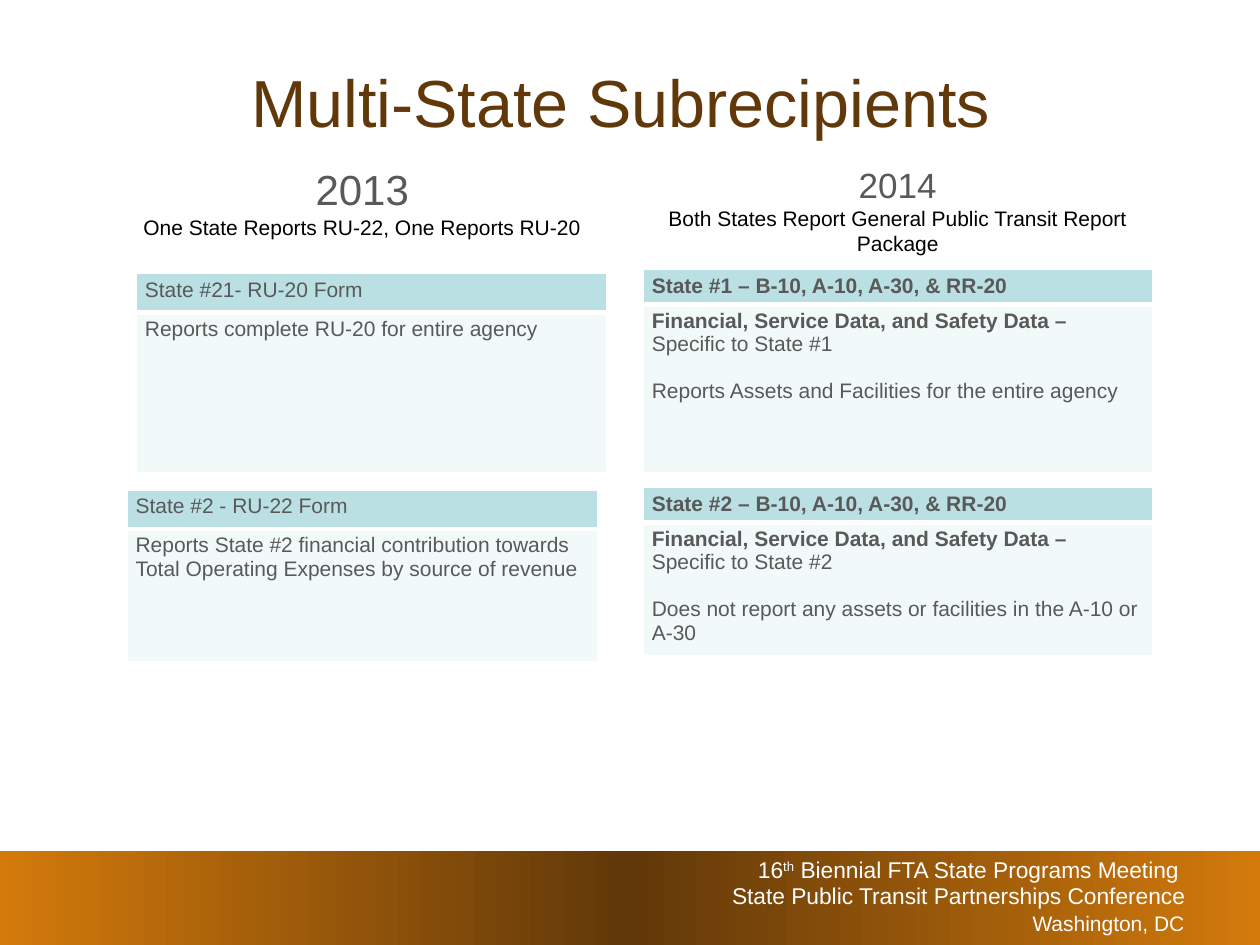
import copy

import pptx
import pptx.dml.color
import pptx.enum.shapes
import pptx.enum.text
import pptx.oxml
import pptx.oxml.ns
import pptx.util

Pt = pptx.util.Pt
RGBColor = pptx.dml.color.RGBColor
Align = pptx.enum.text.PP_ALIGN

BROWN = RGBColor(0x61, 0x38, 0x09)
ORANGE = RGBColor(0xD3, 0x7A, 0x0B)
GRAY = RGBColor(0x59, 0x59, 0x59)
BLACK = RGBColor(0, 0, 0)
WHITE = RGBColor(0xFF, 0xFF, 0xFF)
TEAL = RGBColor(0xBB, 0xE0, 0xE3)
PALE_TEAL = RGBColor(0xF1, 0xF9, 0xF9)

TITLE = "Multi-State Subrecipients"
FOOTER = [
    [("16", 13), ("th", 13), (" Biennial FTA State Programs Meeting ", 13)],
    [("State Public Transit Partnerships Conference", 13), ("\n", 13), ("Washington, DC", 12)],
]
YEARS = [
    (54, "2013", 24, "One State Reports RU-22, One Reports RU-20"),
    (360, "2014", 20, "Both States Report General Public Transit Report Package"),
]
SAFETY = "Financial, Service Data, and Safety Data –"
FORMS = [
    {"box": (72.5, 280, 269), "heights": (22.3, 75.6), "bold": False,
     "head": "State #2 - RU-22 Form",
     "body": [("Reports State #2 financial contribution towards Total Operating Expenses "
               "by source of revenue", False, 0)]},
    {"box": (77.8, 156.2, 269), "heights": (22.3, 91.4), "bold": False,
     "head": "State #21- RU-20 Form",
     "body": [("Reports complete RU-20 for entire agency", False, 0)]},
    {"box": (367.5, 154, 291), "heights": (20, 96), "bold": True,
     "head": "State #1 – B-10, A-10, A-30, & RR-20",
     "body": [(SAFETY, True, 0), ("Specific to State #1", False, 0),
              ("Reports Assets and Facilities for the entire agency", False, 13.4)]},
    {"box": (367.5, 278.6, 291), "heights": (20, 73), "bold": True,
     "head": "State #2 – B-10, A-10, A-30, & RR-20",
     "body": [(SAFETY, True, 0), ("Specific to State #2", False, 0),
              ("Does not report any assets or facilities in the A-10 or A-30", False, 13.4)]},
]


def set_attributes(target, values):
    for name, value in values.items():
        setattr(target, name, value)


def add_run(paragraph, text, size, color, bold=False):
    run = paragraph.add_run()
    run.text = text
    set_attributes(run.font, {"name": "Arial", "size": Pt(size), "bold": bold})
    run.font.color.rgb = color
    return run


def next_paragraph(frame, index):
    return frame.add_paragraph() if index else frame.paragraphs[0]


def add_text_box(slide, left, top, width, height):
    frame = slide.shapes.add_textbox(Pt(left), Pt(top), Pt(width), Pt(height)).text_frame
    frame.word_wrap = True
    return frame


def add_footer(slide):
    band = slide.shapes.add_shape(
        pptx.enum.shapes.MSO_SHAPE.RECTANGLE, Pt(0), Pt(486), Pt(720), Pt(54))
    band.shadow.inherit = False
    band.line.fill.background()
    band.fill.gradient()
    band.fill.gradient_angle = 0
    stop_list = band.fill._fill._gradFill.gsLst
    stop_list.append(copy.deepcopy(stop_list[0]))
    stops = [(0, ORANGE), (0.5, BROWN), (1, ORANGE)]
    for stop, (position, color) in zip(band.fill.gradient_stops, stops):
        stop.color.rgb = color
        stop.position = position

    frame = add_text_box(slide, 180, 486, 504, 53.3)
    for index, runs in enumerate(FOOTER):
        paragraph = next_paragraph(frame, index)
        set_attributes(paragraph, {"alignment": Align.RIGHT, "line_spacing": Pt(15)})
        for text, size in runs:
            if text == "\n":
                paragraph.add_line_break()
                continue
            run = add_run(paragraph, text, size, WHITE)
            if text == "th":
                run.font._element.set("baseline", "30000")


def add_title(slide):
    title = slide.shapes.title
    set_attributes(title, {"left": Pt(44.6), "top": Pt(31), "width": Pt(620.6), "height": Pt(53.3)})
    set_attributes(title.text_frame, {
        "vertical_anchor": pptx.enum.text.MSO_ANCHOR.MIDDLE,
        "auto_size": pptx.enum.text.MSO_AUTO_SIZE.NONE,
        "word_wrap": True,
    })
    paragraph = title.text_frame.paragraphs[0]
    paragraph.alignment = Align.CENTER
    add_run(paragraph, TITLE, 38, BROWN)


def add_year(slide, left, year, size, summary):
    frame = add_text_box(slide, left, 90, 306, 257)
    for index, line in enumerate([(year, size, GRAY), (summary, 12, BLACK)]):
        paragraph = next_paragraph(frame, index)
        paragraph.alignment = Align.CENTER
        add_run(paragraph, *line)


def set_borders(cell, bottom_width):
    properties = cell._tc.get_or_add_tcPr()
    widths = {"lnL": 1, "lnR": 1, "lnT": 1, "lnB": bottom_width}
    for index, (tag, width) in enumerate(widths.items()):
        properties.insert(index, pptx.oxml.parse_xml(
            f'<a:{tag} {pptx.oxml.ns.nsdecls("a")} w="{Pt(width)}">'
            f'<a:solidFill><a:srgbClr val="{WHITE}"/></a:solidFill></a:{tag}>'))


def add_form(slide, form):
    left, top, width = map(Pt, form["box"])
    height = Pt(sum(form["heights"]))
    table = slide.shapes.add_table(2, 1, left, top, width, height).table
    set_attributes(table, {"first_row": False, "horz_banding": False})
    rows = [
        ([(form["head"], form["bold"], 0)], TEAL, 3),
        (form["body"], PALE_TEAL, 1),
    ]
    for row, (lines, color, bottom_width) in enumerate(rows):
        table.rows[row].height = Pt(form["heights"][row])
        cell = table.cell(row, 0)
        set_attributes(cell, {"margin_left": Pt(5), "margin_right": Pt(5),
                              "margin_top": Pt(2.7), "margin_bottom": Pt(2.7)})
        cell.fill.solid()
        cell.fill.fore_color.rgb = color
        set_borders(cell, bottom_width)
        for index, (text, bold, space) in enumerate(lines):
            paragraph = next_paragraph(cell.text_frame, index)
            if space:
                paragraph.space_before = Pt(space)
            add_run(paragraph, text, 12, GRAY, bold)


def main():
    presentation = pptx.Presentation()
    set_attributes(presentation, {"slide_width": Pt(720), "slide_height": Pt(540)})
    slide = presentation.slides.add_slide(presentation.slide_layouts.get_by_name("Title Only"))
    add_footer(slide)
    add_title(slide)
    for year in YEARS:
        add_year(slide, *year)
    for form in FORMS:
        add_form(slide, form)
    presentation.save("out.pptx")


if __name__ == "__main__":
    main()
